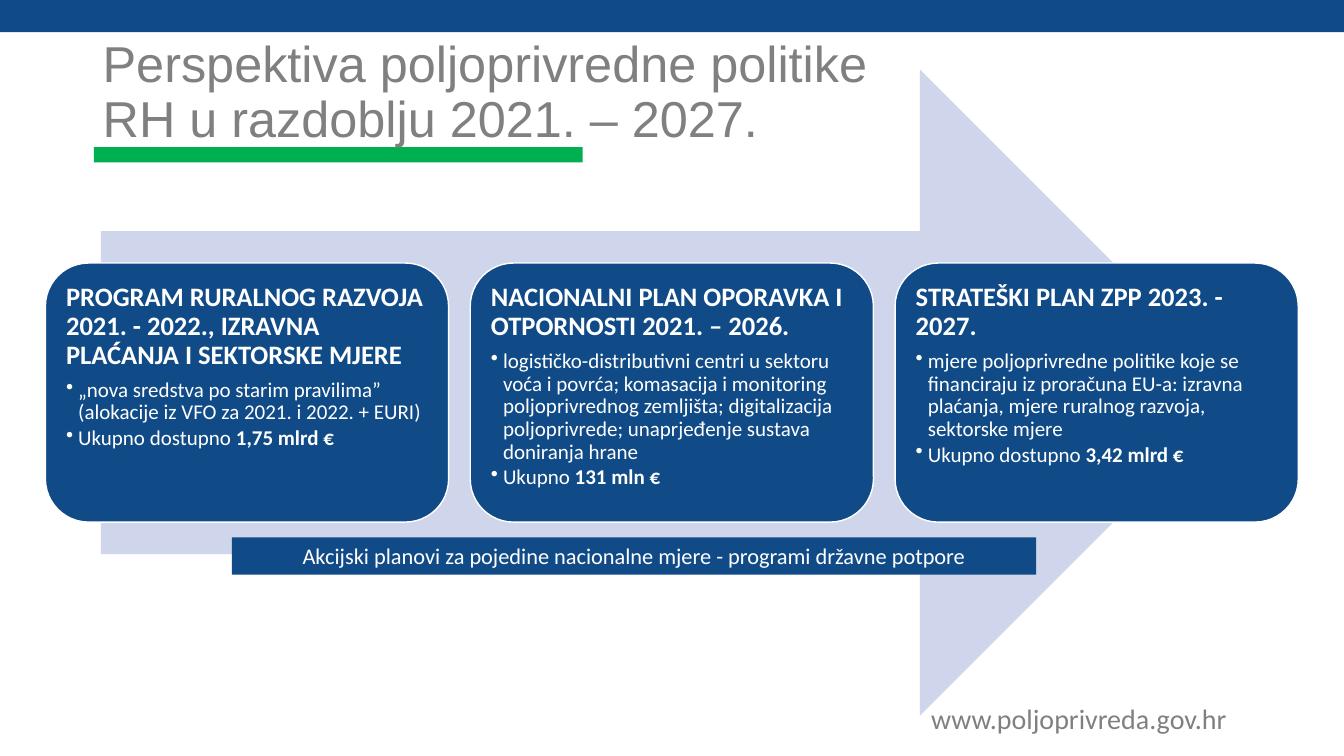
from dataclasses import dataclass

from lxml import etree
from pptx import Presentation
from pptx.dml.color import RGBColor
from pptx.enum.shapes import MSO_SHAPE
from pptx.enum.text import MSO_ANCHOR, PP_ALIGN
from pptx.oxml.ns import qn
from pptx.util import Emu, Inches, Pt

RECTANGLE = MSO_SHAPE.RECTANGLE
ROUNDED_RECTANGLE = MSO_SHAPE.ROUNDED_RECTANGLE
RIGHT_ARROW = MSO_SHAPE.RIGHT_ARROW
TOP = MSO_ANCHOR.TOP
MIDDLE = MSO_ANCHOR.MIDDLE
LEFT = PP_ALIGN.LEFT
CENTER = PP_ALIGN.CENTER

SLIDE_WIDTH = Inches(13.333)
SLIDE_HEIGHT = Inches(7.5)


@dataclass(frozen=True)
class Theme:
    blue: RGBColor = RGBColor.from_string("114B87")
    green: RGBColor = RGBColor.from_string("00B050")
    pale: RGBColor = RGBColor.from_string("CFD5EA")
    gray: RGBColor = RGBColor.from_string("808080")
    white: RGBColor = RGBColor.from_string("FFFFFF")
    title_font: str = "Arial"
    body_font: str = "Calibri"
    title_size: int = 36
    address_size: int = 20
    heading_size: int = 19
    banner_size: int = 16
    bullet_size: int = 15


THEME = Theme()

CARD_LEFT, CARD_TOP, CARD_WIDTH, CARD_HEIGHT = 3.38, 34.8, 30, 34.27
CARD_PITCH = 31.61

CARDS = [
    (
        "PROGRAM RURALNOG RAZVOJA 2021. - 2022., IZRAVNA PLAĆANJA I SEKTORSKE MJERE",
        "„nova sredstva po starim pravilima” (alokacije iz VFO za 2021. i 2022. + EURI)",
        "Ukupno dostupno ",
        "1,75 mlrd €",
    ),
    (
        "NACIONALNI PLAN OPORAVKA I OTPORNOSTI 2021. – 2026.",
        "logističko-distributivni centri u sektoru voća i povrća; komasacija i "
        "monitoring poljoprivrednog zemljišta; digitalizacija poljoprivrede; "
        "unaprjeđenje sustava doniranja hrane",
        "Ukupno ",
        "131 mln €",
    ),
    (
        "STRATEŠKI PLAN ZPP 2023. - 2027.",
        "mjere poljoprivredne politike koje se financiraju iz proračuna EU-a: "
        "izravna plaćanja, mjere ruralnog razvoja, sektorske mjere",
        "Ukupno dostupno ",
        "3,42 mlrd €",
    ),
]


def place(left, top, width, height):
    """Turn percentages of the slide into lengths."""
    return (
        Emu(round(SLIDE_WIDTH * left / 100)),
        Emu(round(SLIDE_HEIGHT * top / 100)),
        Emu(round(SLIDE_WIDTH * width / 100)),
        Emu(round(SLIDE_HEIGHT * height / 100)),
    )


def add_block(slide, kind, box, fill, line=None):
    shape = slide.shapes.add_shape(kind, *place(*box))
    shape.shadow.inherit = False
    shape.fill.solid()
    shape.fill.fore_color.rgb = fill
    if line is None:
        shape.line.fill.background()
    else:
        shape.line.color.rgb = line
        shape.line.width = Pt(1)
    return shape


def style(paragraph, size, color, font=THEME.body_font, alignment=LEFT):
    paragraph.alignment = alignment
    paragraph.font.size = Pt(size)
    paragraph.font.name = font
    paragraph.font.color.rgb = color


def add_text(slide, box, text, size, font, anchor=TOP, line_spacing=1.0):
    shape = slide.shapes.add_textbox(*place(*box))
    frame = shape.text_frame
    frame.word_wrap = True
    frame.vertical_anchor = anchor
    paragraph = frame.paragraphs[0]
    paragraph.text = text
    paragraph.line_spacing = line_spacing
    style(paragraph, size, THEME.gray, font)


def add_bullet(frame, text, bold_text=""):
    paragraph = frame.add_paragraph()
    style(paragraph, THEME.bullet_size, THEME.white)
    paragraph.line_spacing = 0.9
    paragraph.space_after = Pt(2)
    paragraph.add_run().text = text
    if bold_text:
        run = paragraph.add_run()
        run.text = bold_text
        run.font.bold = True
    properties = paragraph._p.get_or_add_pPr()
    properties.set("marL", str(Inches(0.12)))
    properties.set("indent", str(Inches(-0.12)))
    bullet = etree.Element(qn("a:buChar"), char="•")
    properties.find(qn("a:defRPr")).addprevious(bullet)


def add_card(slide, column, heading, measures, total_label, total):
    box = (CARD_LEFT + column * CARD_PITCH, CARD_TOP, CARD_WIDTH, CARD_HEIGHT)
    card = add_block(slide, ROUNDED_RECTANGLE, box, THEME.blue, THEME.white)
    frame = card.text_frame
    frame.word_wrap = True
    frame.vertical_anchor = TOP
    frame.margin_left = frame.margin_right = Inches(0.08)
    frame.margin_top = frame.margin_bottom = Inches(0.08)
    paragraph = frame.paragraphs[0]
    paragraph.text = heading
    paragraph.line_spacing = 0.9
    paragraph.space_after = Pt(6.5)
    style(paragraph, THEME.heading_size, THEME.white)
    paragraph.font.bold = True
    add_bullet(frame, measures)
    add_bullet(frame, total_label, total)


def add_banner(slide, box, text):
    banner = add_block(slide, RECTANGLE, box, THEME.blue)
    frame = banner.text_frame
    frame.word_wrap = True
    frame.vertical_anchor = MIDDLE
    paragraph = frame.paragraphs[0]
    paragraph.text = text
    style(paragraph, THEME.banner_size, THEME.white, alignment=CENTER)


def main():
    presentation = Presentation()
    presentation.slide_width = SLIDE_WIDTH
    presentation.slide_height = SLIDE_HEIGHT
    slide = presentation.slides.add_slide(presentation.slide_layouts[6])

    add_block(slide, RECTANGLE, (6.98, 19.47, 36.38, 2), THEME.green)
    add_block(slide, RECTANGLE, (0, 0, 100, 4.27), THEME.blue)
    add_text(slide, (68.55, 92.13, 24.6, 5.87), "www.poljoprivreda.gov.hr",
             THEME.address_size, THEME.body_font)
    add_text(slide, (6.9, 5.33, 86.25, 14.13),
             "Perspektiva poljoprivredne politike \vRH u razdoblju 2021. – 2027.",
             THEME.title_size, THEME.title_font, MIDDLE, 0.9)
    add_block(slide, RIGHT_ARROW, (7.5, 9.2, 84.98, 85.47), THEME.pale)
    for column, card in enumerate(CARDS):
        add_card(slide, column, *card)
    add_banner(slide, (17.25, 71.07, 59.85, 4.93),
               "Akcijski planovi za pojedine nacionalne mjere - programi državne potpore")

    presentation.save("out.pptx")


if __name__ == "__main__":
    main()
